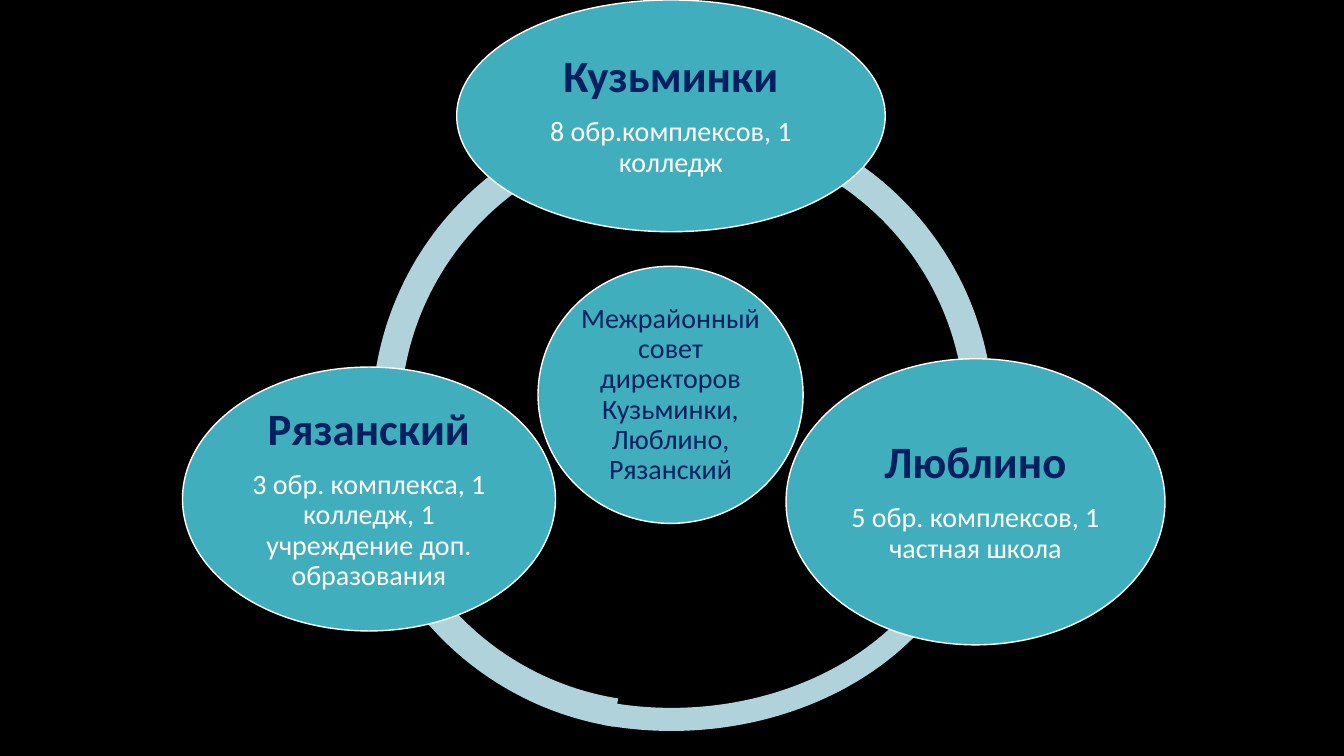
from dataclasses import dataclass

from pptx import Presentation
from pptx.dml.color import RGBColor
from pptx.enum.shapes import MSO_SHAPE
from pptx.enum.text import MSO_ANCHOR, PP_ALIGN
from pptx.util import Cm, Pt

OVAL = MSO_SHAPE.OVAL
BLOCK_ARC = MSO_SHAPE.BLOCK_ARC
MIDDLE = MSO_ANCHOR.MIDDLE
CENTER = PP_ALIGN.CENTER

BLACK, WHITE, NAVY = "000000", "FFFFFF", "002060"
TEAL, PALE_TEAL = "41AEBD", "B0D3DB"
FONT = "Calibri"
ARC_THICKNESS = 0.046
ADJUSTMENT_PER_DEGREE = 0.6  # 60000 angle units over a 100000 scale


@dataclass(frozen=True)
class Box:
    left: float
    top: float
    width: float
    height: float


@dataclass(frozen=True)
class Line:
    text: str
    size: int
    color: str
    bold: bool = False


@dataclass(frozen=True)
class Arc:
    box: Box
    start: float
    end: float


@dataclass(frozen=True)
class Oval:
    box: Box
    inset: float
    lines: tuple[Line, ...]


def district(box: Box, name: str, schools: str) -> Oval:
    return Oval(box, 0.1, (Line(name, 32, NAVY, True), Line(schools, 20, WHITE)))


RING = (
    Arc(Box(8.86, 2.74, 15.67, 15.67), 99.03, 162.9),
    Arc(Box(9.09, 5.77, 15.67, 12.65), 2.52, 105.85),
    Arc(Box(9.37, 2.74, 15.67, 15.67), 160.63, 9.37),
)
COUNCIL = Oval(
    Box(13.56, 6.71, 6.68, 6.48),
    0.07,
    (Line("Межрайонный совет директоров Кузьминки, Люблино, Рязанский", 20, NAVY),),
)
DISTRICTS = (
    district(Box(11.51, 0, 10.8, 5.84), "Кузьминки", "8 обр.комплексов, 1 колледж"),
    district(Box(19.81, 9.04, 9.55, 7.21), "Люблино", "5 обр. комплексов, 1 частная школа"),
    district(
        Box(4.6, 9.25, 9.4, 6.65),
        "Рязанский",
        "3 обр. комплекса, 1 колледж, 1 учреждение доп. образования",
    ),
)


def paint(fill, color: str) -> None:
    fill.solid()
    fill.fore_color.rgb = RGBColor.from_string(color)


def add_filled(slide, kind: MSO_SHAPE, box: Box, color: str):
    shape = slide.shapes.add_shape(
        kind, Cm(box.left), Cm(box.top), Cm(box.width), Cm(box.height)
    )
    shape.shadow.inherit = False
    paint(shape.fill, color)
    return shape


def draw_arc(slide, arc: Arc) -> None:
    band = add_filled(slide, BLOCK_ARC, arc.box, PALE_TEAL)
    band.line.fill.background()
    band.adjustments[0] = arc.start * ADJUSTMENT_PER_DEGREE
    band.adjustments[1] = arc.end * ADJUSTMENT_PER_DEGREE
    band.adjustments[2] = ARC_THICKNESS


def draw_oval(slide, oval: Oval) -> None:
    ellipse = add_filled(slide, OVAL, oval.box, TEAL)
    paint(ellipse.line.fill, WHITE)
    ellipse.line.width = Pt(1)
    frame = ellipse.text_frame
    frame.word_wrap = True
    frame.vertical_anchor = MIDDLE
    frame.margin_left = frame.margin_right = Cm(oval.inset)
    frame.margin_top = frame.margin_bottom = Cm(oval.inset)
    for index, line in enumerate(oval.lines):
        paragraph = frame.add_paragraph() if index else frame.paragraphs[0]
        paragraph.alignment = CENTER
        paragraph.line_spacing = 0.9
        paragraph.space_after = Pt(line.size * 0.35)
        run = paragraph.add_run()
        run.text = line.text
        run.font.name = FONT
        run.font.size = Pt(line.size)
        run.font.bold = line.bold
        paint(run.font.fill, line.color)


def main() -> None:
    deck = Presentation()
    deck.slide_width, deck.slide_height = Cm(33.87), Cm(19.05)
    slide = deck.slides.add_slide(deck.slide_layouts.get_by_name("Blank"))
    paint(slide.background.fill, BLACK)
    for arc in RING:
        draw_arc(slide, arc)
    for oval in (COUNCIL, *DISTRICTS):
        draw_oval(slide, oval)
    deck.save("out.pptx")


if __name__ == "__main__":
    main()
